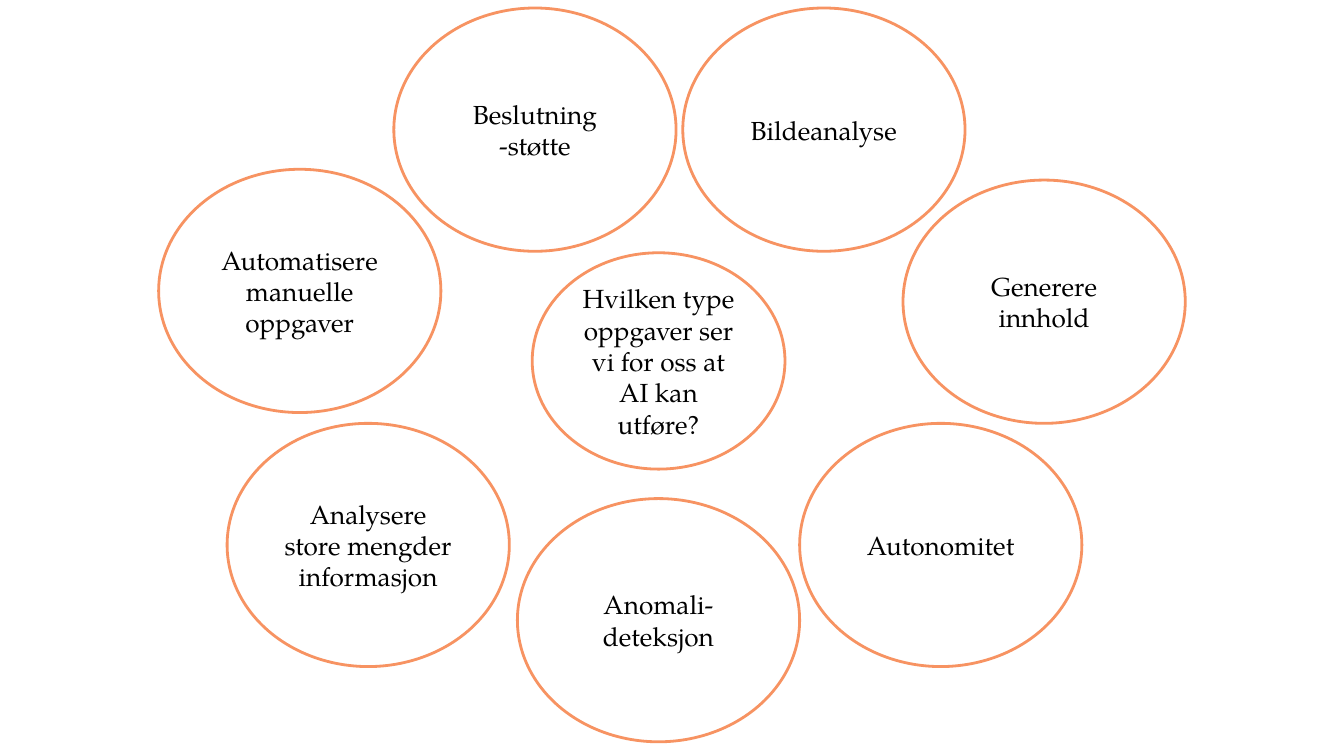
import dataclasses

import pptx
import pptx.dml.color
import pptx.enum.shapes
import pptx.enum.text
import pptx.util

Pt = pptx.util.Pt
RGBColor = pptx.dml.color.RGBColor


@dataclasses.dataclass(frozen=True)
class Theme:
    font: str = "TeX Gyre Pagella"
    text_size: float = 14
    line_width: float = 1.5
    text: RGBColor = RGBColor(0, 0, 0)
    fill: RGBColor = RGBColor(255, 255, 255)
    outline: RGBColor = RGBColor(0xF7, 0x93, 0x62)


THEME = Theme()
SLIDE_SIZE = (720, 405)
INSET = 7.2

QUESTION = "Hvilken type oppgaver ser vi for oss at AI kan utføre?"
QUESTION_POSITION = (285.1, 135.4)
QUESTION_SIZE = (135.4, 115.9)

TASK_SIZE = (151.2, 130.3)
TOP_ROW = 4.3
LOWER_ROW = 226.8
TASKS = [
    (85, 90.7, ["Automatisere manuelle oppgaver"]),
    (121.7, LOWER_ROW, ["Analysere store mengder informasjon"]),
    (483.8, 96.5, ["Generere innhold"]),
    (428.4, LOWER_ROW, ["Autonomitet"]),
    (277.2, 267.1, ["Anomali-", "deteksjon"]),
    (365.8, TOP_ROW, ["Bildeanalyse"]),
    (211, TOP_ROW, ["Beslutning", "-støtte"]),
]


def apply_format(target, values):
    for name, value in values.items():
        setattr(target, name, value)


def write_paragraph(paragraph, text):
    paragraph.alignment = pptx.enum.text.PP_ALIGN.CENTER
    run = paragraph.add_run()
    run.text = text
    apply_format(run.font, {"name": THEME.font, "size": Pt(THEME.text_size)})
    run.font.color.rgb = THEME.text


def add_bubble(slide, position, size, lines):
    shape = slide.shapes.add_shape(
        pptx.enum.shapes.MSO_SHAPE.OVAL, *map(Pt, (*position, *size))
    )
    shape.shadow.inherit = False
    shape.fill.solid()
    shape.fill.fore_color.rgb = THEME.fill
    shape.line.color.rgb = THEME.outline
    shape.line.width = Pt(THEME.line_width)

    frame = shape.text_frame
    margins = {f"margin_{side}": Pt(INSET) for side in ("left", "top", "right", "bottom")}
    apply_format(frame, {
        "word_wrap": True,
        "vertical_anchor": pptx.enum.text.MSO_ANCHOR.MIDDLE,
        **margins,
    })
    for index, line in enumerate(lines):
        paragraph = frame.add_paragraph() if index else frame.paragraphs[0]
        write_paragraph(paragraph, line)


def main():
    presentation = pptx.Presentation()
    width, height = map(Pt, SLIDE_SIZE)
    apply_format(presentation, {"slide_width": width, "slide_height": height})
    slide = presentation.slides.add_slide(presentation.slide_layouts[6])

    add_bubble(slide, QUESTION_POSITION, QUESTION_SIZE, [QUESTION])
    for left, top, lines in TASKS:
        add_bubble(slide, (left, top), TASK_SIZE, lines)

    presentation.save("out.pptx")


if __name__ == "__main__":
    main()
